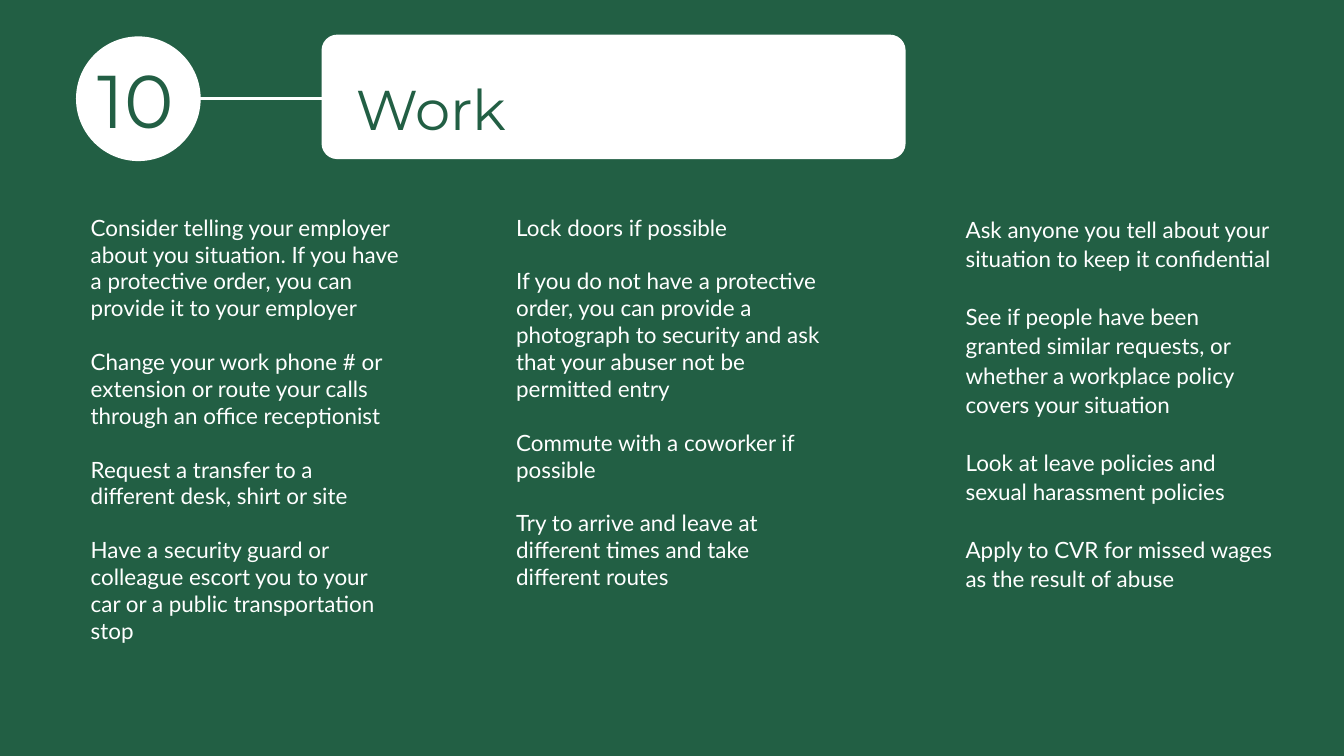
from lxml.etree import SubElement
from pptx import Presentation
from pptx.dml.color import RGBColor
from pptx.enum.shapes import MSO_CONNECTOR, MSO_SHAPE
from pptx.enum.text import MSO_ANCHOR, MSO_AUTO_SIZE, PP_ALIGN
from pptx.oxml.ns import qn
from pptx.util import Pt

GREEN = RGBColor(0x22, 0x5F, 0x44)
WHITE = RGBColor(0xFF, 0xFF, 0xFF)
HEADING_FONT, BODY_FONT = "Montserrat", "Lato"
TEXT_SIZE = 24
SINGLE_LINE = 28.8
LOOSE_LINE = 31.2

# Left edge, line pitch and tips of each column
COLUMNS = [
    (97.2, SINGLE_LINE, [
        "Consider telling your employer about you situation. If you have a "
        "protective order, you can provide it to your employer",
        "Change your work phone # or extension or route your calls through "
        "an office receptionist",
        "Request a transfer to a different desk, shirt or site",
        "Have a security guard or colleague escort you to your car or a "
        "public transportation stop",
    ]),
    (553, SINGLE_LINE, [
        "Lock doors if possible",
        "If you do not have a protective order, you can provide a photograph "
        "to security and ask that your abuser not be permitted entry",
        "Commute with a coworker if possible",
        "Try to arrive and leave at different times and take different routes",
    ]),
    (1034.6, LOOSE_LINE, [
        "Ask anyone you tell about your situation to keep it confidential",
        "See if people have been granted similar requests, or whether a "
        "workplace policy covers your situation",
        "Look at leave policies and sexual harassment policies",
        "Apply to CVR for missed wages as the result of abuse",
    ]),
]


def place(shape, left, top, width, height):
    shape.left, shape.top = Pt(left), Pt(top)
    shape.width, shape.height = Pt(width), Pt(height)


def write(box, lines, font, size, color, line_pitch=None, gap=0):
    """Fill a box without margins, one paragraph for each line."""
    frame = box.text_frame
    frame.word_wrap = True
    frame.auto_size = MSO_AUTO_SIZE.NONE
    frame.vertical_anchor = MSO_ANCHOR.TOP
    frame.margin_left = frame.margin_right = 0
    frame.margin_top = frame.margin_bottom = 0
    frame.text = "\n".join(lines)
    for para in frame.paragraphs:
        para.alignment = PP_ALIGN.LEFT
        para.space_before, para.space_after = Pt(0), Pt(gap)
        if line_pitch:
            para.line_spacing = Pt(line_pitch)
        for span in para.runs:
            span.font.name = font
            span.font.size = Pt(size)
            span.font.color.rgb = color


def add_white_shape(page, kind, left, top, width, height):
    shape = page.shapes.add_shape(
        kind, Pt(left), Pt(top), Pt(width), Pt(height))
    shape.shadow.inherit = False
    shape.fill.solid()
    shape.fill.fore_color.rgb = WHITE
    shape.line.fill.background()
    return shape


def add_header(page, number, heading, left, top):
    """Number disc joined by a line to the heading card."""
    card = add_white_shape(page, MSO_SHAPE.ROUNDED_RECTANGLE,
                           left + 265, top, 622, 129.6)
    card.adjustments[0] = 0.115
    card.line.color.rgb = WHITE
    card.line.width = Pt(3.75)

    disc = 133.6
    add_white_shape(page, MSO_SHAPE.OVAL, left, top, disc, disc)

    middle = Pt(top + disc / 2)
    link = page.shapes.add_connector(
        MSO_CONNECTOR.STRAIGHT, Pt(left + disc / 2), middle,
        Pt(left + 268), middle)
    link.line.color.rgb = WHITE
    link.line.width = Pt(3)
    SubElement(link.element.spPr, qn("a:effectLst"))

    title = page.shapes.title
    place(title, left + 300, top + 16.4, 567, 88)
    write(title, [heading], HEADING_FONT, 60, GREEN, 96)
    title.element.getparent().append(title.element)  # in front of the card

    label = page.shapes.add_textbox(0, 0, 0, 0)
    place(label, left + 23, top + 18.6, 117, 97)
    write(label, [number], HEADING_FONT, 80, GREEN, 96)


def add_column(page, tips, line_pitch, left, top, width, height):
    """Tips set one blank line apart."""
    box = page.shapes.add_textbox(0, 0, 0, 0)
    place(box, left, top, width, height)
    fixed_pitch = None if line_pitch == SINGLE_LINE else line_pitch
    write(box, tips, BODY_FONT, TEXT_SIZE, WHITE, fixed_pitch, gap=line_pitch)


def main():
    deck = Presentation()
    deck.slide_width, deck.slide_height = Pt(1440), Pt(810)
    page = deck.slides.add_slide(deck.slide_layouts[5])
    page.background.fill.solid()
    page.background.fill.fore_color.rgb = GREEN

    add_header(page, "10", "Work", 81.4, 39)
    for left, line_pitch, tips in COLUMNS:
        add_column(page, tips, line_pitch, left, 229, 334, 540)
    deck.save("out.pptx")


if __name__ == "__main__":
    main()
